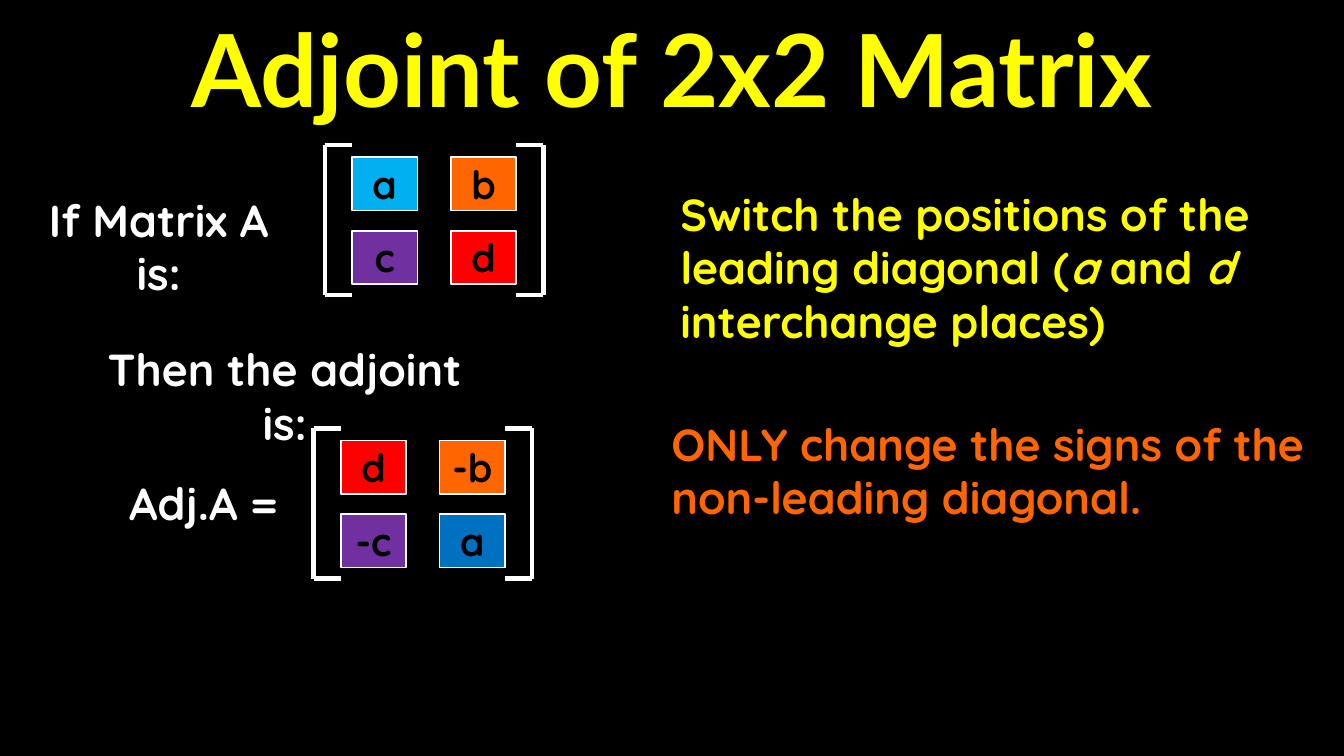
from pptx import Presentation
from pptx.dml.color import RGBColor
from pptx.enum.shapes import MSO_CONNECTOR, MSO_SHAPE
from pptx.enum.text import MSO_AUTO_SIZE, PP_ALIGN
from pptx.oxml import parse_xml
from pptx.oxml.ns import nsdecls
from pptx.util import Inches, Pt


def paint(color, value):
    color.rgb = RGBColor.from_string(value)


def write(shapes, words, left, top, width, height, size=32, font="Quicksand",
          color="FFFFFF", align=PP_ALIGN.CENTER):
    """Add bold text; words between bars are italic."""
    box = shapes.add_textbox(Inches(left), Inches(top), Inches(width), Inches(height))
    frame = box.text_frame
    frame.word_wrap = True
    frame.auto_size = MSO_AUTO_SIZE.SHAPE_TO_FIT_TEXT
    for row, line in enumerate(words.split("\n")):
        para = frame.add_paragraph() if row else frame.paragraphs[0]
        para.alignment = align
        for part, piece in enumerate(line.split("|")):
            run = para.add_run()
            run.text = piece
            run.font.name = font
            run.font.size = Pt(size)
            run.font.bold = True
            run.font.italic = part % 2 == 1
            paint(run.font.color, color)


deck = Presentation()
deck.slide_width, deck.slide_height = Inches(13.33), Inches(7.5)
slide = deck.slides.add_slide(deck.slide_layouts[6])
slide.background.fill.solid()
paint(slide.background.fill.fore_color, "000000")

# Title and lead-in text
write(slide.shapes, "Adjoint of 2x2 Matrix", 0, 0.02, 13.33, 1.31,
      size=72, font="Lato", color="FFFF00")
write(slide.shapes, "If Matrix A is:", 0.16, 1.86, 2.83, 0.64)
write(slide.shapes, "Then the adjoint is:", 0.76, 3.34, 4.13, 0.64)
write(slide.shapes, "Adj.A =", 1.12, 4.67, 1.8, 0.64)

# Matrices: left, top, then label and fill of each cell
grids = [
    (3.22, 1.44, [("a", "00B0F0"), ("b", "FF6600"), ("c", "7030A0"), ("d", "FF0000")]),
    (3.11, 4.25, [("d", "FF0000"), ("-b", "FF6600"), ("-c", "7030A0"), ("a", "0070C0")]),
]
wide, high, hook = 2.17, 1.49, 0.27

for left, top, cells in grids:
    group = slide.shapes.add_group_shape()

    # Square brackets
    for edge, tip in [(left, left + hook), (left + wide, left + wide - hook)]:
        base = top + high
        for x1, y1, x2, y2 in [(edge, top, tip, top), (edge, base, tip, base),
                               (edge, base, edge, top)]:
            line = group.shapes.add_connector(
                MSO_CONNECTOR.STRAIGHT, Inches(x1), Inches(y1), Inches(x2), Inches(y2))
            line.line.width = Pt(3)
            paint(line.line.color, "FFFFFF")
            line._element.spPr.append(parse_xml(f"<a:effectLst {nsdecls('a')}/>"))

    # Cells and their letters
    for spot, (label, fill) in enumerate(cells):
        x = left + hook + spot % 2 * 0.98
        y = top + 0.12 + spot // 2 * 0.73
        cell = group.shapes.add_shape(
            MSO_SHAPE.RECTANGLE, Inches(x), Inches(y), Inches(0.65), Inches(0.53))
        cell.shadow.inherit = False
        cell.fill.solid()
        paint(cell.fill.fore_color, fill)
        cell.line.width = Pt(1.25)
        paint(cell.line.color, "FFFFFF")
        write(group.shapes, label, x, y - 0.02, 0.65, 0.57, size=28, color="000000")

# Rules on the right
write(slide.shapes,
      "Switch the positions of the leading diagonal (|a| and |d| interchange places)",
      6.65, 1.8, 6.67, 1.72, color="FFFF00", align=PP_ALIGN.LEFT)
write(slide.shapes, "ONLY change the signs of the\nnon-leading diagonal.",
      6.56, 4.08, 6.75, 1.18, color="FF6600", align=PP_ALIGN.LEFT)

deck.save("out.pptx")
